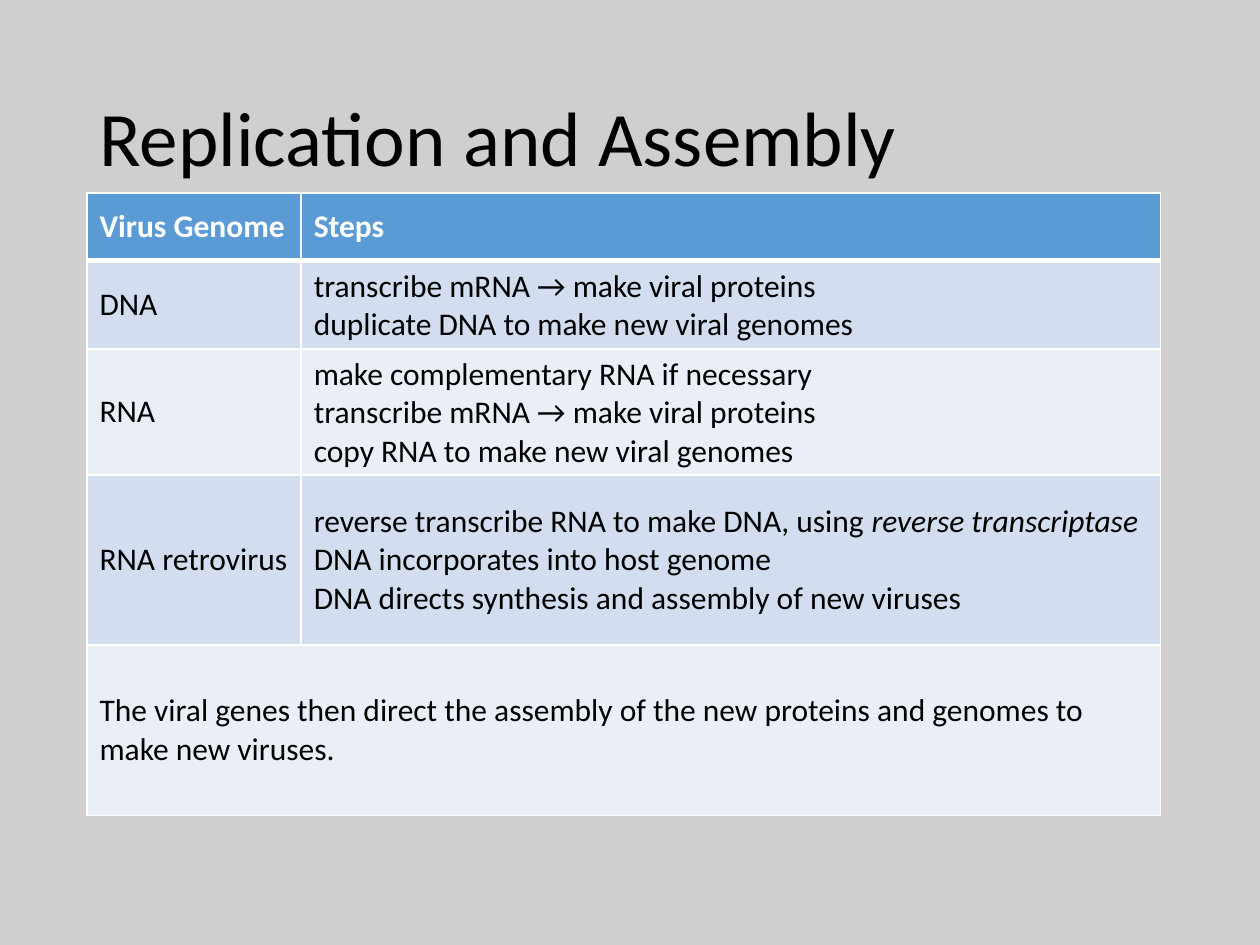
from dataclasses import dataclass

from lxml.etree import SubElement as Sub
from pptx import Presentation
from pptx.dml.color import RGBColor
from pptx.enum.text import MSO_ANCHOR as Anchor
from pptx.oxml.ns import qn
from pptx.util import Inches, Pt

FONT = "Calibri"
BLACK, WHITE, GREY = "000000", "FFFFFF", "D0CECE"
BLUE, DARK, LIGHT = "5B9BD5", "D2DEEF", "EAEFF7"
COLS = (1.7, 6.82)


@dataclass
class Row:
    high: float
    fill: str
    cells: tuple[str, ...]  # lines split by \n, italics between asterisks


ROWS = (
    Row(0.54, BLUE, ("Virus Genome", "Steps")),
    Row(0.67, DARK, ("DNA", "transcribe mRNA → make viral proteins\n"
                     "duplicate DNA to make new viral genomes")),
    Row(0.67, LIGHT, ("RNA", "make complementary RNA if necessary\n"
                      "transcribe mRNA → make viral proteins\n"
                      "copy RNA to make new viral genomes")),
    Row(1.35, DARK, ("RNA retrovirus",
                     "reverse transcribe RNA to make DNA, using *reverse transcriptase*\n"
                     "DNA incorporates into host genome\n"
                     "DNA directs synthesis and assembly of new viruses")),
    Row(1.35, LIGHT, ("The viral genes then direct the assembly of the new proteins "
                      "and genomes to make new viruses.",)),
)


def paint(fill, tint: str) -> None:
    fill.solid()
    fill.fore_color.rgb = RGBColor.from_string(tint)


def write(frame, text: str, size: float, tint: str, bold: bool = False) -> None:
    for i, line in enumerate(text.split("\n")):
        para = frame.add_paragraph() if i else frame.paragraphs[0]
        parts = [(part, j % 2 == 1) for j, part in enumerate(line.split("*")) if part]
        for part, slant in parts:
            run = para.add_run()
            run.text = part
            font = run.font
            font.name, font.size = FONT, Pt(size)
            font.bold, font.italic = bold, slant
            font.color.rgb = RGBColor.from_string(tint)


def edge(cell, side: str, width: float) -> None:
    line = Sub(cell._tc.get_or_add_tcPr(), qn(f"a:ln{side}"), w=str(Pt(width)))
    Sub(Sub(line, qn("a:solidFill")), qn("a:srgbClr"), val=WHITE)


def draw_title(slide, text: str) -> None:
    box = slide.shapes.add_textbox(Inches(0.69), Inches(0.4), Inches(8.62), Inches(1.45))
    frame = box.text_frame
    frame.word_wrap = True
    frame.vertical_anchor = Anchor.MIDDLE
    write(frame, text, 44, BLACK)
    frame.paragraphs[0].line_spacing = 0.9


def draw_table(slide, rows: tuple[Row, ...]) -> None:
    high = sum(row.high for row in rows)
    table = slide.shapes.add_table(len(rows), len(COLS), Inches(0.69), Inches(1.53),
                                   Inches(sum(COLS)), Inches(high)).table
    for col, wide in zip(table.columns, COLS):
        col.width = Inches(wide)
    for r, row in enumerate(rows):
        table.rows[r].height = Inches(row.high)
        # A row with a single text spans the table
        if len(row.cells) < len(COLS):
            table.cell(r, 0).merge(table.cell(r, len(COLS) - 1))
        for c in range(len(COLS)):
            cell = table.cell(r, c)
            cell.vertical_anchor = Anchor.MIDDLE
            # The rule under the header is thicker
            for side, width in (("L", 1), ("R", 1), ("T", 3 if r == 1 else 1),
                                ("B", 3 if r == 0 else 1)):
                edge(cell, side, width)
            paint(cell.fill, row.fill)
        for c, text in enumerate(row.cells):
            write(table.cell(r, c).text_frame, text, 18,
                  BLACK if r else WHITE, bold=r == 0)


def main() -> None:
    deck = Presentation()
    deck.slide_width, deck.slide_height = Inches(10), Inches(7.5)
    slide = deck.slides.add_slide(deck.slide_layouts[6])
    paint(slide.background.fill, GREY)
    draw_title(slide, "Replication and Assembly")
    draw_table(slide, ROWS)
    deck.save("out.pptx")


if __name__ == "__main__":
    main()
